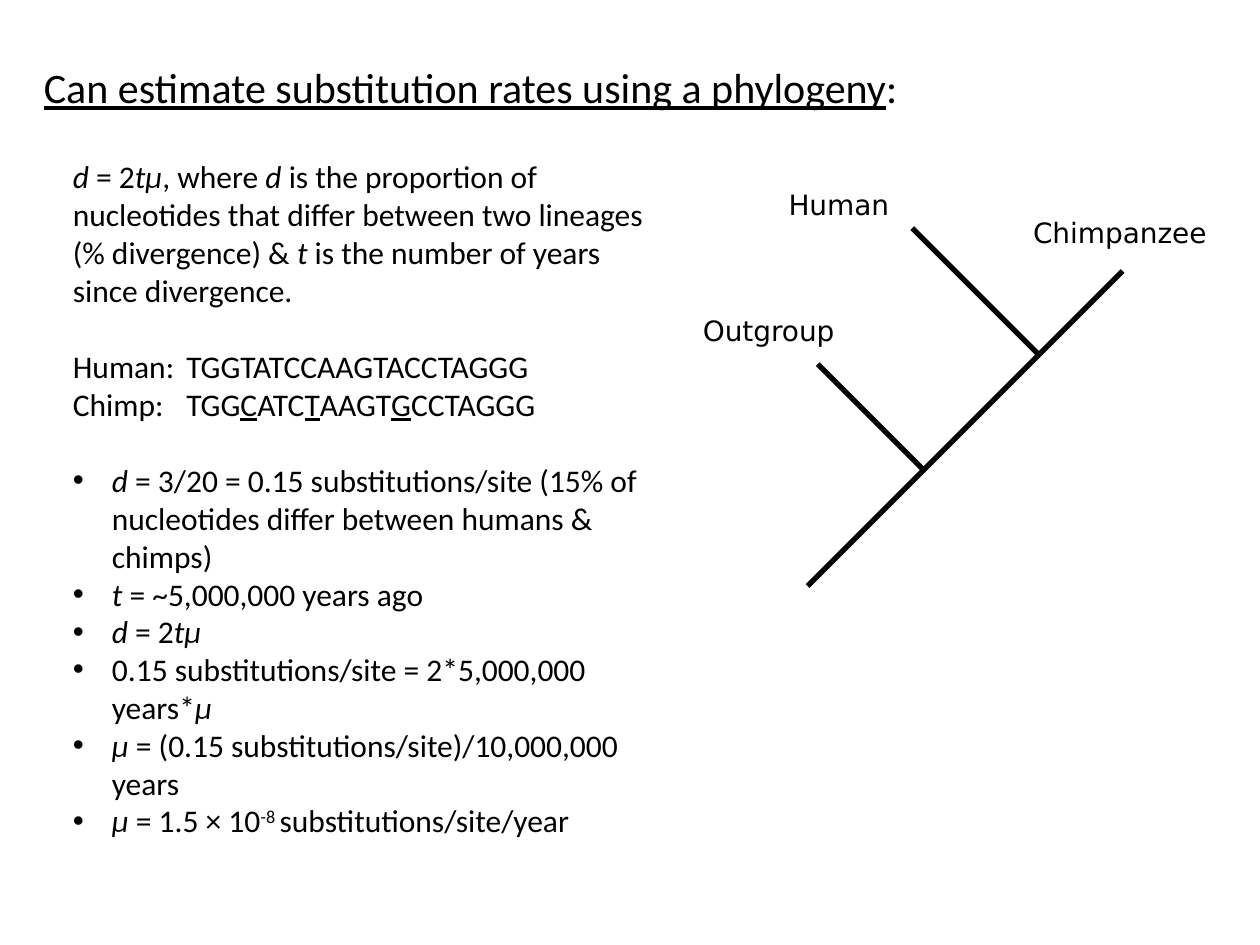
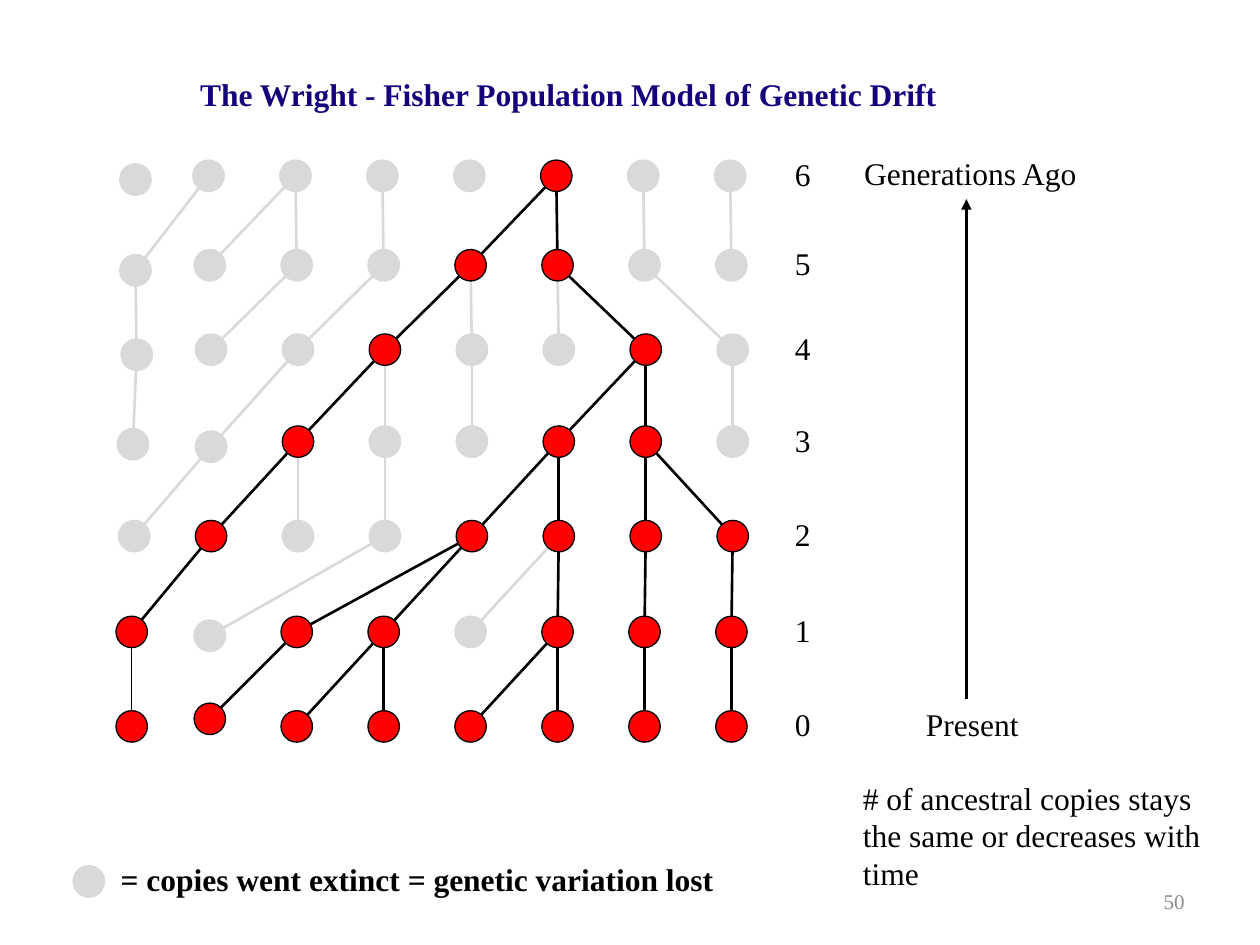
from dataclasses import dataclass

from lxml.etree import SubElement
from pptx import Presentation
from pptx.dml.color import RGBColor
from pptx.enum.shapes import MSO_CONNECTOR, MSO_SHAPE
from pptx.enum.text import MSO_ANCHOR, MSO_AUTO_SIZE, PP_ALIGN
from pptx.oxml.ns import qn
from pptx.util import Pt

PX = 9144  # one px is a hundredth of an inch


@dataclass(frozen=True)
class Theme:
    black: RGBColor = RGBColor(0x00, 0x00, 0x00)
    red: RGBColor = RGBColor(0xFF, 0x00, 0x00)
    pale: RGBColor = RGBColor(0xD9, 0xD9, 0xD9)
    navy: RGBColor = RGBColor(0x12, 0x01, 0x7B)
    grey: RGBColor = RGBColor(0x8C, 0x8C, 0x8C)
    sans: str = "Calibri"
    label: str = "DejaVu Sans"
    serif: str = "Times New Roman"
    title: int = 24
    body: int = 18
    taxon: int = 16
    footer: int = 12


THEME = Theme()


def add_text(page, place, paragraphs, font, size, color=THEME.black, wrap=False):
    """Add a text box; a span is (text, marks): b bold, i italic, u underline, ^ raised."""
    box = page.shapes.add_textbox(*(round(length * PX) for length in place))
    frame = box.text_frame
    frame.word_wrap = wrap
    frame.auto_size = MSO_AUTO_SIZE.SHAPE_TO_FIT_TEXT
    for index, spans in enumerate(paragraphs):
        para = frame.add_paragraph() if index else frame.paragraphs[0]
        for text, marks in spans:
            span = para.add_run()
            span.text = text
            span.font.name = font
            span.font.size = Pt(size)
            span.font.color.rgb = color
            span.font.bold = "b" in marks
            span.font.italic = "i" in marks
            span.font.underline = "u" in marks
            if "^" in marks:
                span.font._element.set("baseline", "30000")
    return box


def add_line(page, start, end, width, color=THEME.black):
    line = page.shapes.add_connector(
        MSO_CONNECTOR.STRAIGHT, *(round(length * PX) for length in (*start, *end)))
    line.line.width = Pt(width)
    line.line.color.rgb = color
    SubElement(line._element.spPr, qn("a:effectLst"))
    return line


deck = Presentation()
deck.slide_width = 1000 * PX
deck.slide_height = 750 * PX
blank = deck.slide_layouts[6]

# Slide 1: substitution rates
page = deck.slides.add_slide(blank)
title = add_text(page, (25, 15, 933, 111),
                 [[("Can estimate substitution rates using a phylogeny", "u"), (":", "")]],
                 THEME.sans, THEME.title, wrap=True)
title.text_frame.margin_top = 34 * PX

# Every branch climbs at 45 degrees from its foot: 1 to the right, -1 to the left
LEFT, RIGHT = -1, 1
trunk = ((641, 465), 250, RIGHT)
human_branch = ((824, 281), 100, LEFT)
outgroup_branch = ((733, 373), 84, LEFT)
for (foot_x, foot_y), rise, direction in (trunk, human_branch, outgroup_branch):
    add_line(page, (foot_x, foot_y), (foot_x + direction * rise, foot_y - rise), 3)

for taxon, place in [
    ("Outgroup", (548, 244, 126, 37)),
    ("Human", (616, 144, 101, 37)),
    ("Chimpanzee", (810, 166, 158, 37)),
]:
    add_text(page, place, [[(taxon, "")]], THEME.label, THEME.taxon)

definition = [
    ("d", "i"), (" = 2", ""), ("tµ", "i"), (", where ", ""), ("d", "i"),
    (" is the proportion of nucleotides that differ between two lineages "
     "(% divergence) & ", ""),
    ("t", "i"), (" is the number of years since divergence.", ""),
]
sequences = [
    [("Human:\tTGGTATCCAAGTACCTAGGG", "")],
    [("Chimp:\tTGG", ""), ("C", "u"), ("ATC", ""), ("T", "u"), ("AAGT", ""),
     ("G", "u"), ("CCTAGGG", "")],
]
steps = [
    [("d", "i"), (" = 3/20 = 0.15 substitutions/site (15% of nucleotides differ "
                  "between humans & chimps)", "")],
    [("t ", "i"), ("= ~5,000,000 years ago", "")],
    [("d", "i"), (" = 2", ""), ("tµ", "i")],
    [("0.15 substitutions/site = 2*5,000,000 years*", ""), ("µ", "i")],
    [("µ ", "i"), ("= (0.15 substitutions/site)/10,000,000 years", "")],
    [("µ ", "i"), ("= 1.5 × 10", ""), ("-8 ", "^"), ("substitutions/site/year", "")],
]
working = add_text(page, (48, 120, 478, 586), [definition, *sequences, *steps],
                   THEME.sans, THEME.body, wrap=True)
paras = working.text_frame.paragraphs
sequence_paras, step_paras = paras[1:3], paras[3:]
for para in sequence_paras:
    tabs = SubElement(para._p.get_or_add_pPr(), qn("a:tabLst"))
    SubElement(tabs, qn("a:tab"), pos=str(90 * PX), algn="l")
for para in step_paras:
    properties = para._p.get_or_add_pPr()
    properties.set("marL", str(31 * PX))
    properties.set("indent", str(-31 * PX))
    SubElement(properties, qn("a:buFont"), typeface="Arial")
    SubElement(properties, qn("a:buChar"), char="•")
for para in (sequence_paras[0], step_paras[0]):
    para.space_before = Pt(22)

# Slide 2: genetic drift
page = deck.slides.add_slide(blank)
DOT = 25
COPIES = 8
COLUMN_STEP = 69
OLDEST = 6

# Keyed by generations ago
row_tops = {6: 127, 5: 198, 4: 265, 3: 338, 2: 413, 1: 489, 0: 564}
first_lefts = {6: 95, 5: 95, 4: 96, 3: 93, 2: 94, 1: 92, 0: 92}
second_lefts = {6: 153, 5: 154, 4: 155, 3: 155, 2: 155, 1: 154, 0: 154}
# Dots that sit off their row, by (generation, column)
nudges = {(6, 0): 3, (5, 0): 4, (4, 0): 4, (3, 0): 2, (3, 1): 4, (1, 1): 3, (0, 1): -6}
# For each copy, the column of its parent one generation earlier
parents = {
    5: (1, 2, 2, 3, 5, 5, 6, 7),
    4: (0, 2, 3, 4, 4, 5, 5, 6),
    3: (0, 2, 3, 3, 4, 6, 6, 7),
    2: (1, 2, 2, 3, 5, 5, 6, 6),
    1: (1, 3, 4, 4, 5, 5, 6, 7),
    0: (0, 2, 3, 3, 5, 5, 6, 7),
}

# A copy survives if it has descendants in the present
survivors = {0: set(range(COPIES))}
for generation in range(OLDEST):
    survivors[generation + 1] = {parents[generation][column]
                                 for column in survivors[generation]}

centers = {}
for generation, top in row_tops.items():
    for column in range(COPIES):
        left = (second_lefts[generation] + COLUMN_STEP * (column - 1) if column
                else first_lefts[generation])
        centers[generation, column] = (
            left + DOT / 2, top + nudges.get((generation, column), 0) + DOT / 2)

# Extinct lineages lie behind surviving ones
for surviving, color in ((False, THEME.pale), (True, THEME.black)):
    for generation, parent_columns in parents.items():
        for column, parent in enumerate(parent_columns):
            if (column in survivors[generation]) == surviving:
                width = 0.75 if (generation, column) == (0, 0) else 1.5
                add_line(page, centers[generation + 1, parent],
                         centers[generation, column], width, color)

key_center = (58 + DOT / 2, 687 + DOT / 2)
dots = [(center, column in survivors[generation])
        for (generation, column), center in centers.items()]
for (x, y), surviving in [*dots, (key_center, False)]:
    dot = page.shapes.add_shape(
        MSO_SHAPE.OVAL, round((x - DOT / 2) * PX), round((y - DOT / 2) * PX),
        DOT * PX, DOT * PX)
    dot.shadow.inherit = False
    dot.fill.solid()
    dot.fill.fore_color.rgb = THEME.red if surviving else THEME.pale
    dot.line.color.rgb = THEME.black if surviving else THEME.pale
    dot.line.width = Pt(0.75)

for generation, top in row_tops.items():
    add_text(page, (621, top - 9, 34, 40), [[(str(generation), "")]],
             THEME.serif, THEME.body)

time_arrow = add_line(page, (767, 555), (767, 158), 2)
SubElement(time_arrow.line._get_or_add_ln(), qn("a:tailEnd"), type="triangle")

for text, place, marks, color, wrap in [
    ("The Wright - Fisher Population Model of Genetic Drift",
     (149, 55, 611, 40), "b", THEME.navy, False),
    ("Generations Ago", (676, 117, 191, 40), "", THEME.black, False),
    ("Present", (725, 555, 95, 40), "", THEME.black, False),
    ("# of ancestral copies stays the same or decreases with time",
     (675, 613, 292, 101), "", THEME.black, True),
    ("= copies went extinct = genetic variation lost",
     (86, 678, 496, 40), "b", THEME.black, False),
]:
    add_text(page, place, [[(text, marks)]], THEME.serif, THEME.body, color, wrap)

number = add_text(page, (717, 695, 233, 40), [[("50", "")]],
                  THEME.serif, THEME.footer, THEME.grey, wrap=True)
number.text_frame.auto_size = MSO_AUTO_SIZE.NONE
number.text_frame.vertical_anchor = MSO_ANCHOR.MIDDLE
number.text_frame.paragraphs[0].alignment = PP_ALIGN.RIGHT

deck.save("out.pptx")
